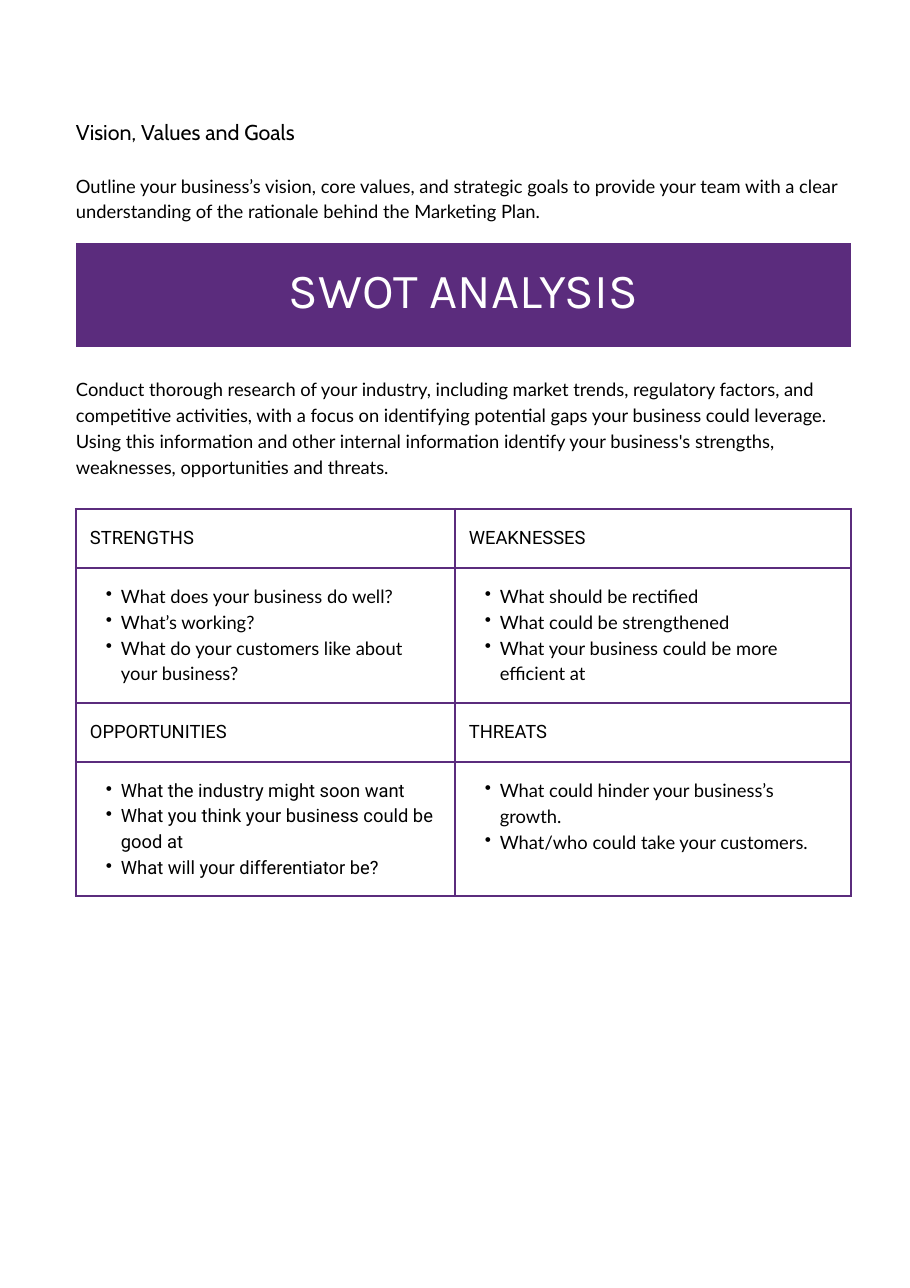
from lxml import etree
from pptx import Presentation
from pptx import util as u
from pptx.dml.color import RGBColor
from pptx.enum import text
from pptx.oxml import ns

EMU_PER_PX = 8298
COLORS = {"ink": "000000", "paper": "FFFFFF", "purple": "5B2C7D"}
LEFT, WIDTH = 76, 775

HEADING = "Vision, Values and Goals"
VISION = (
    "Outline your business’s vision, core values, and strategic goals to provide "
    "your team with a clear understanding of the rationale behind the Marketing Plan."
)
BANNER = "SWOT ANALYSIS"
RESEARCH = (
    "Conduct thorough research of your industry, including market trends, regulatory "
    "factors, and competitive activities, with a focus on identifying potential gaps "
    "your business could leverage. Using this information and other internal "
    "information identify your business's strengths, weaknesses, opportunities and threats."
)
SWOT = [
    [
        ("STRENGTHS", "Lato", [
            "What does your business do well?",
            "What’s working?",
            "What do your customers like about your business?",
        ]),
        ("WEAKNESSES", "Lato", [
            "What should be rectified",
            "What could be strengthened",
            "What your business could be more efficient at",
        ]),
    ],
    [
        ("OPPORTUNITIES", "Roboto", [
            "What the industry might soon want",
            "What you think your business could be good at",
            "What will your differentiator be?",
        ]),
        ("THREATS", "Lato", [
            "What could hinder your business’s growth.",
            "What/who could take your customers.",
        ]),
    ],
]
COLUMN_WIDTHS = [379, 396]
ROW_HEIGHTS = [59, 135, 59, 134]


def px(length):
    return u.Emu(length * EMU_PER_PX)


def write(frame, lines, font="Lato", size=12, color="ink", leading=16.8,
          align=text.PP_ALIGN.LEFT, bullet=False):
    frame.word_wrap = True
    for index, line in enumerate(lines):
        para = frame.add_paragraph() if index else frame.paragraphs[0]
        para.alignment = align
        para.line_spacing = u.Pt(leading)
        para.space_before = para.space_after = u.Pt(0)
        span = para.add_run()
        span.text = line
        span.font.name = font
        span.font.size = u.Pt(size)
        span.font.color.rgb = RGBColor.from_string(COLORS[color])
        if bullet:
            props = para._p.get_or_add_pPr()
            props.set("marL", str(px(31)))
            props.set("indent", str(-px(15)))
            etree.SubElement(props, ns.qn("a:buChar"), char="•")


def write_box(box, line, top, height, **style):
    box.left, box.top, box.width, box.height = map(px, (LEFT, top, WIDTH, height))
    frame = box.text_frame
    frame.margin_left = frame.margin_top = frame.margin_right = frame.margin_bottom = 0
    frame.vertical_anchor = text.MSO_ANCHOR.TOP
    frame.auto_size = text.MSO_AUTO_SIZE.NONE
    write(frame, [line], **style)


def add_grid(page, top, widths, heights):
    grid = page.shapes.add_table(
        len(heights), len(widths), px(LEFT), px(top), px(sum(widths)), px(sum(heights))
    ).table
    grid.first_row = grid.horz_banding = False
    for column, width in zip(grid.columns, widths):
        column.width = px(width)
    for row, height in zip(grid.rows, heights):
        row.height = px(height)
    return grid


def format_cell(cell, margin, fill=None, border=None):
    cell.margin_left = cell.margin_top = cell.margin_right = cell.margin_bottom = px(margin)
    cell.vertical_anchor = text.MSO_ANCHOR.TOP
    props = cell._tc.get_or_add_tcPr()
    for side in ("lnL", "lnR", "lnT", "lnB"):
        line = etree.SubElement(props, ns.qn(f"a:{side}"), w=str(u.Pt(1.5)))
        if border:
            paint = etree.SubElement(line, ns.qn("a:solidFill"))
            etree.SubElement(paint, ns.qn("a:srgbClr"), val=COLORS[border])
        else:
            etree.SubElement(line, ns.qn("a:noFill"))
    if fill:
        cell.fill.solid()
        cell.fill.fore_color.rgb = RGBColor.from_string(COLORS[fill])
    else:
        cell.fill.background()


def main():
    deck = Presentation()
    deck.slide_width, deck.slide_height = u.Inches(8.26), u.Inches(11.69)
    page = deck.slides.add_slide(deck.slide_layouts[5])

    write_box(page.shapes.title, HEADING, 115, 30, font="Cabin", size=14, leading=19.6)
    for line, top, height in [(VISION, 171, 52), (RESEARCH, 375, 104)]:
        write_box(page.shapes.add_textbox(0, 0, 0, 0), line, top, height)

    banner = add_grid(page, 243, [WIDTH], [104]).cell(0, 0)
    format_cell(banner, 9, fill="purple")
    write(banner.text_frame, [BANNER], font="Karla", size=32, color="paper",
          leading=44.8, align=text.PP_ALIGN.CENTER)

    grid = add_grid(page, 509, COLUMN_WIDTHS, ROW_HEIGHTS)
    for band, quadrants in enumerate(SWOT):
        for column, (name, font, questions) in enumerate(quadrants):
            label, details = (grid.cell(2 * band + step, column) for step in (0, 1))
            for cell in (label, details):
                format_cell(cell, 14, border="purple")
            write(label.text_frame, [name], font="Roboto")
            write(details.text_frame, questions, font=font, bullet=True)

    deck.save("out.pptx")


if __name__ == "__main__":
    main()
